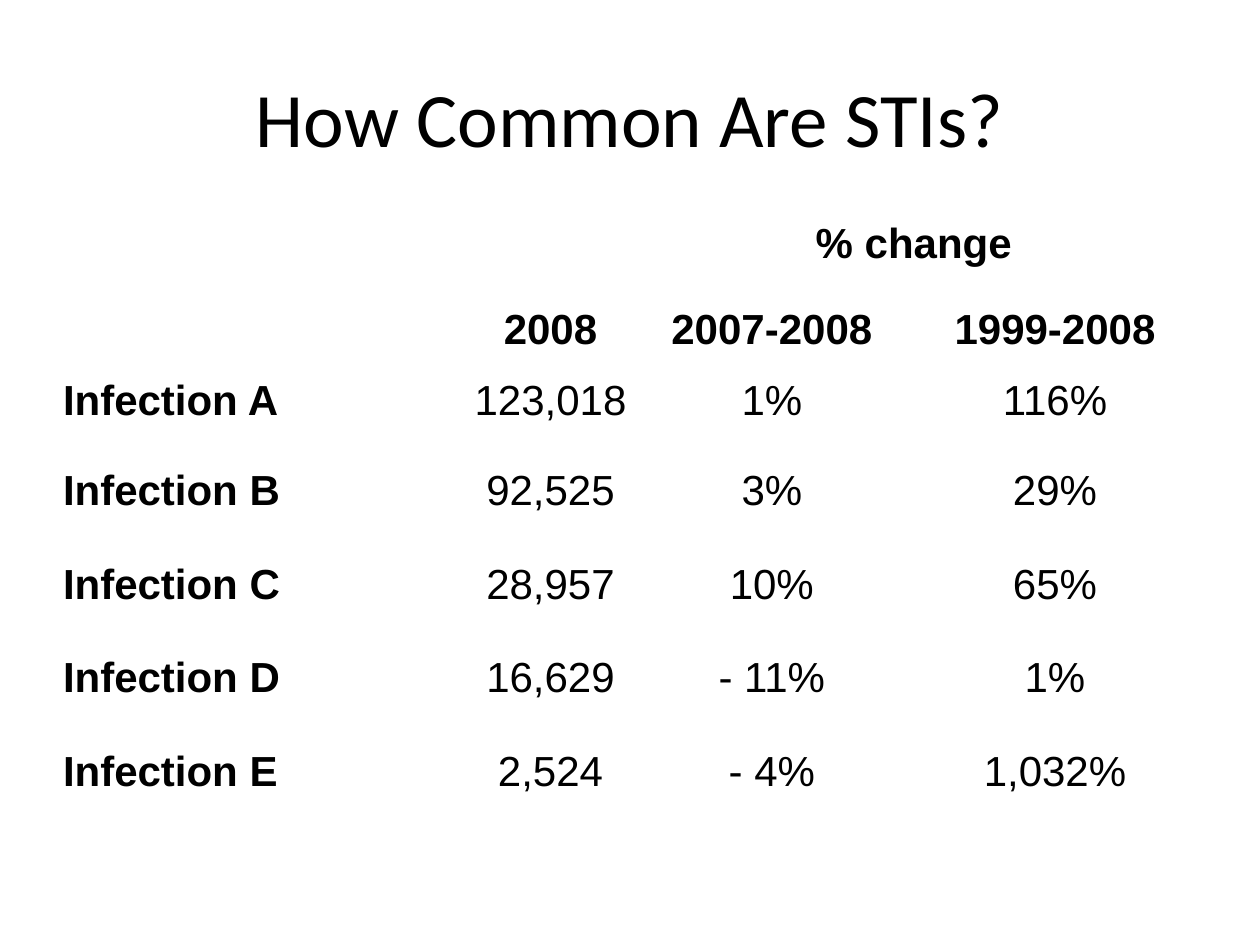
import pptx
import pptx.dml.color
import pptx.enum.text
import pptx.util

BLACK = pptx.dml.color.RGBColor(0, 0, 0)
ALIGN = pptx.enum.text.PP_ALIGN
ANCHOR = pptx.enum.text.MSO_ANCHOR
Inches = pptx.util.Inches
SLIDE_W, SLIDE_H = Inches(10), Inches(7.5)

COL_WIDTHS = [3.23, 1.27, 2.24, 2.25]
ROW_HEIGHTS = [0.5, 0.74, 0.72, 0.74, 0.74, 0.74, 0.76]
ROWS = [
    ["", "", "% change", ""],
    ["", "2008", "2007-2008", "1999-2008"],
    ["Infection A", "123,018", "1%", "116%"],
    ["Infection B", "92,525", "3%", "29%"],
    ["Infection C", "28,957", "10%", "65%"],
    ["Infection D", "16,629", "- 11%", "1%"],
    ["Infection E", "2,524", "- 4%", "1,032%"],
]
HEADER_ROWS = 2


def write(tf, text, align, **font):
    p = tf.paragraphs[0]
    p.alignment = align
    r = p.add_run()
    r.text = text
    r.font.color.rgb = BLACK
    for name, value in font.items():
        setattr(r.font, name, value)


def add_title(slide, box, text):
    tf = slide.shapes.add_textbox(*box).text_frame
    tf.word_wrap = True
    tf.vertical_anchor = ANCHOR.MIDDLE
    write(tf, text, ALIGN.CENTER, name="Calibri", size=pptx.util.Pt(44))


def add_infection_table(slide, box):
    table = slide.shapes.add_table(len(ROWS), len(COL_WIDTHS), *box).table
    table.first_row = table.horz_banding = False
    left, top, width, height = box

    # Columns and rows share out the box
    for col, share in zip(table.columns, COL_WIDTHS):
        col.width = int(width * share / sum(COL_WIDTHS))
    for row, share in zip(table.rows, ROW_HEIGHTS):
        row.height = int(height * share / sum(ROW_HEIGHTS))

    # Bold headings and infection names, plain centred figures
    for i, row in enumerate(ROWS):
        for j, text in enumerate(row):
            cell = table.cell(i, j)
            cell.fill.background()
            cell.vertical_anchor = ANCHOR.MIDDLE if i == 1 else ANCHOR.TOP
            for side in ("left", "right", "top", "bottom"):
                setattr(cell, f"margin_{side}", 0)
            if text:
                write(cell.text_frame, text, ALIGN.CENTER if j else ALIGN.LEFT,
                      name="Arial", size=pptx.util.Pt(24),
                      bold=i < HEADER_ROWS or j == 0)

    # "% change" spans both comparison periods
    table.cell(0, 2).merge(table.cell(0, 3))


def main():
    prs = pptx.Presentation()
    prs.slide_width, prs.slide_height = SLIDE_W, SLIDE_H
    slide = prs.slides.add_slide(prs.slide_layouts[6])
    left, width = int(SLIDE_W * 0.05), int(SLIDE_W * 0.9)
    add_title(slide, (left, int(SLIDE_H * 0.04), width, Inches(1.25)),
              "How Common Are STIs?")
    add_infection_table(slide, (left, Inches(1.75), width, int(SLIDE_H * 0.66)))
    prs.save("out.pptx")


if __name__ == "__main__":
    main()
